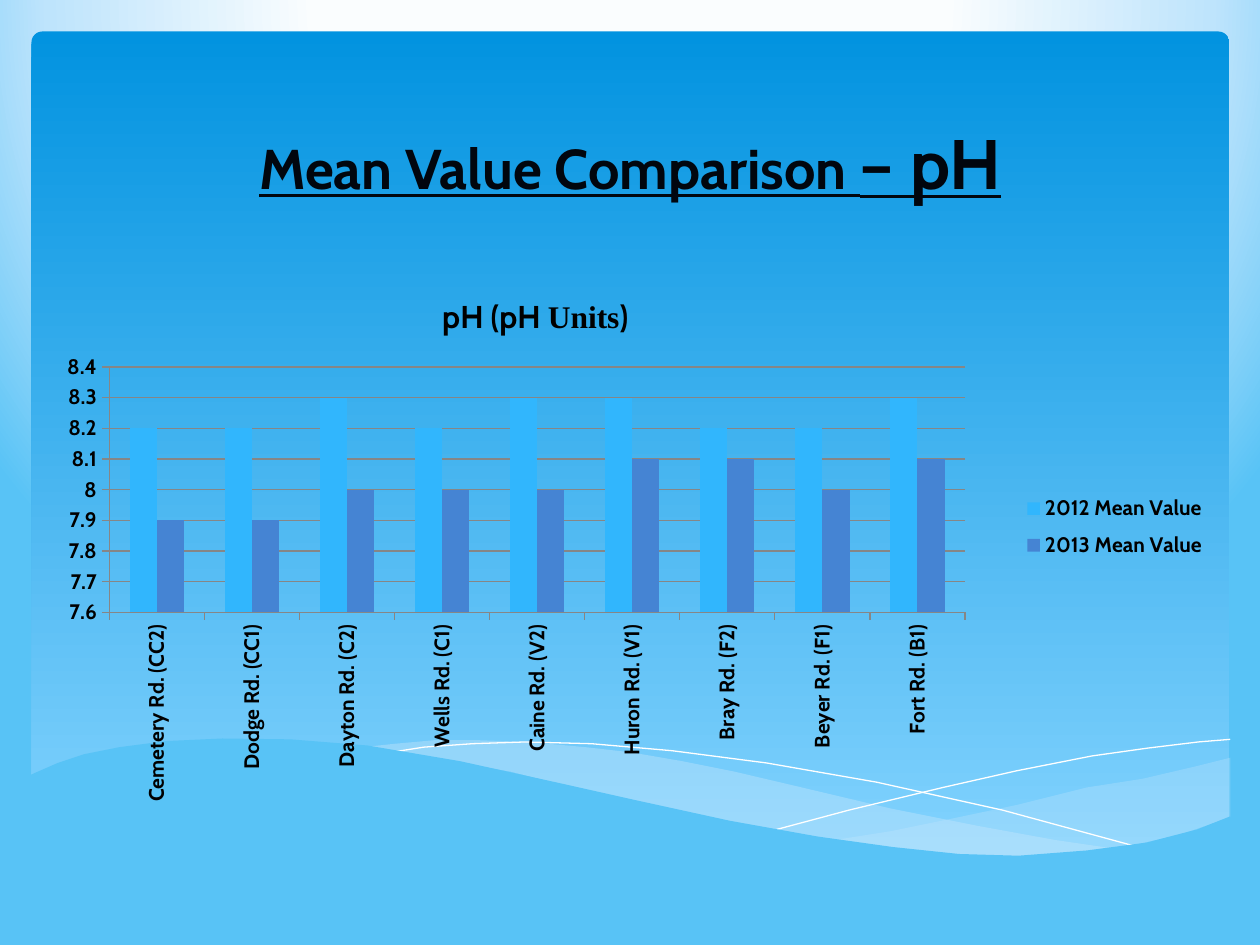
import pptx
import pptx.chart.data
import pptx.dml.color
import pptx.enum.chart
import pptx.enum.shapes
import pptx.enum.text
import pptx.oxml
import pptx.oxml.ns
import pptx.util
import lxml.etree

Pt = pptx.util.Pt
RGB = pptx.dml.color.RGBColor.from_string
qn = pptx.oxml.ns.qn
NS = pptx.oxml.ns.nsdecls("a")

THEME = {
    "font": "Cabin", "serif": "Times New Roman",
    "title": "01060E", "text": "000000", "axis": "868686",
    "panel": ("0293E0", "83D3FE"), "water": "58C3F6",
    "mist": "C6E7FC", "line": "FFFFFF",
    "glow": ((40, "FAFDFE"), (74, "BEE4FC"), (100, "58C3F6")),
    "series": ("31B6FD", "4584D3"),
    "title_size": 32, "emphasis_size": 40, "chart_title_size": 18, "label_size": 12,
}


def format_font(font, **values):
    """Set colour from a hex string and every other value by attribute name."""
    font.color.rgb = RGB(values.pop("color", THEME["text"]))
    for name, value in {"name": THEME["font"], "bold": True, **values}.items():
        setattr(font, name, value)


def place_in_chart(part, index, inner=False, **fractions):
    """Give a chart part a manual layout, in fractions of the chart area."""
    for old in part.findall(qn("c:layout")):
        part.remove(old)
    layout = lxml.etree.Element(qn("c:layout"))
    manual = lxml.etree.SubElement(layout, qn("c:manualLayout"))
    settings = {"layoutTarget": "inner"} if inner else {}
    settings |= {"xMode": "edge", "yMode": "edge", **fractions}
    for name, value in settings.items():
        lxml.etree.SubElement(manual, qn(f"c:{name}")).set("val", str(value))
    part.insert(index, layout)


deck = pptx.Presentation()
deck.slide_width, deck.slide_height = Pt(720), Pt(540)
slide = deck.slides.add_slide(deck.slide_layouts[0])
heading, subtitle = slide.placeholders
subtitle._element.getparent().remove(subtitle._element)

# Background glow from above the top edge
slide.background.fill.gradient()
default_glow = slide._element.find(".//" + qn("a:gradFill"))
stops = "".join(f'<a:gs pos="{pos * 1000}"><a:srgbClr val="{color}"/></a:gs>'
                for pos, color in THEME["glow"])
default_glow.getparent().replace(default_glow, pptx.oxml.parse_xml(
    f'<a:gradFill {NS} rotWithShape="1"><a:gsLst>{stops}</a:gsLst><a:path path="circle">'
    '<a:fillToRect l="20000" t="-40000" r="20000" b="140000"/></a:path></a:gradFill>'))

# Sky panel
sky = slide.shapes.add_shape(pptx.enum.shapes.MSO_SHAPE.ROUNDED_RECTANGLE,
                             Pt(18), Pt(18), Pt(684.5), Pt(475))
sky.adjustments[0] = 0.013
sky.shadow.inherit = False
sky.line.fill.background()
sky.fill.gradient()
sky.fill.gradient_angle = 270
for stop, position, color in zip(sky.fill.gradient_stops, (0, 1), THEME["panel"]):
    stop.position = position
    stop.color.rgb = RGB(color)

# Waves: fill colour (None for an open line), opacity in percent, outline in points
waves = [
    (THEME["mist"], 29, [
        (703, 433), (683, 438), (653, 445), (621, 450), (581, 460), (543, 468), (509, 475),
        (477, 480), (508, 485), (546, 488), (579, 490), (616, 488), (647, 483), (674, 477),
        (703, 467)]),
    (THEME["mist"], 40, [
        (644, 486), (603, 480), (559, 472), (509, 462), (454, 449), (420, 441), (390, 435),
        (361, 430), (335, 427), (302, 424), (274, 423), (248, 423), (226, 425), (207, 427),
        (247, 433), (292, 441), (324, 449), (382, 462), (433, 473), (480, 481), (522, 487),
        (557, 489), (590, 490), (618, 489)]),
    (None, 100, [
        (223, 430), (242, 427), (270, 425), (300, 424), (338, 425), (384, 429), (438, 436),
        (501, 447), (573, 463), (654, 485)]),
    (None, 100, [
        (442, 474.5), (485, 463), (539, 450), (581, 440.5), (624, 432), (656, 427.5),
        (685, 424), (703, 422.5)]),
    (THEME["water"], 100, [
        (703, 466.5), (684, 474), (655, 481.5), (621, 486), (582, 489), (548, 488), (510, 484),
        (467, 478), (417, 469), (362, 457), (322, 448), (263, 435), (210, 426), (166, 422.5),
        (127, 422), (95, 423.5), (68, 427), (48, 431), (33, 436), (17, 443), (17, 526),
        (703, 526)]),
]
for color, opacity, outline in waves:
    start, *rest = [(Pt(x), Pt(y)) for x, y in outline]
    builder = slide.shapes.build_freeform(*start)
    builder.add_line_segments(rest, close=color is not None)
    wave = builder.convert_to_shape()
    wave.shadow.inherit = False
    if color is None:
        wave.fill.background()
        wave.line.color.rgb = RGB(THEME["line"])
        wave.line.width = Pt(0)
        continue
    wave.line.fill.background()
    wave.fill.solid()
    wave.fill.fore_color.rgb = RGB(color)
    if opacity < 100:
        tint = wave._element.spPr.find(qn("a:solidFill"))[0]
        lxml.etree.SubElement(tint, qn("a:alpha")).set("val", str(opacity * 1000))

# Heading, in front of the waves
slide.shapes._spTree.append(heading._element)
heading.left, heading.top, heading.width, heading.height = Pt(54), Pt(66), Pt(612), Pt(54)
heading.text_frame.vertical_anchor = pptx.enum.text.MSO_ANCHOR.BOTTOM
heading_line = heading.text_frame.paragraphs[0]
heading_line.alignment = pptx.enum.text.PP_ALIGN.CENTER
for words, size in (("Mean Value Comparison ", THEME["title_size"]),
                    ("– pH", THEME["emphasis_size"])):
    run = heading_line.add_run()
    run.text = words
    format_font(run.font, size=Pt(size), color=THEME["title"], underline=True)

# pH by site and year
ph_data = pptx.chart.data.CategoryChartData()
ph_data.categories = [
    "Cemetery Rd. (CC2)", "Dodge Rd. (CC1)", "Dayton Rd. (C2)", "Wells Rd. (C1)",
    "Caine Rd. (V2)", "Huron Rd. (V1)", "Bray Rd. (F2)", "Beyer Rd. (F1)", "Fort Rd. (B1)"]
ph_data.add_series("2012 Mean Value", (8.2, 8.2, 8.3, 8.2, 8.3, 8.3, 8.2, 8.2, 8.3))
ph_data.add_series("2013 Mean Value", (7.9, 7.9, 8, 8, 8, 8.1, 8.1, 8, 8.1))
ph_chart = slide.shapes.add_chart(pptx.enum.chart.XL_CHART_TYPE.COLUMN_CLUSTERED,
                                  Pt(18), Pt(144), Pt(684), Pt(324), ph_data).chart
format_font(ph_chart.font, size=Pt(THEME["label_size"]))

bars = ph_chart.plots[0]
bars.gap_width, bars.overlap, bars.vary_by_categories = 150, 0, False
for year, color in zip(bars.series, THEME["series"]):
    year.format.fill.solid()
    year.format.fill.fore_color.rgb = RGB(color)

sites, ph_scale = ph_chart.category_axis, ph_chart.value_axis
for name, value in {"minimum_scale": 7.6, "maximum_scale": 8.4, "major_unit": 0.1,
                    "has_major_gridlines": True}.items():
    setattr(ph_scale, name, value)
for axis in (sites, ph_scale):
    axis.major_tick_mark = pptx.enum.chart.XL_TICK_MARK.OUTSIDE
    format_font(axis.tick_labels.font, size=Pt(THEME["label_size"]))
for ruled in (sites, ph_scale, ph_scale.major_gridlines):
    ruled.format.line.color.rgb = RGB(THEME["axis"])
    ruled.format.line.width = Pt(0.75)
site_labels = sites._element.find(qn("c:txPr")).find(qn("a:bodyPr"))
site_labels.set("rot", "-5400000")
site_labels.set("vert", "horz")

ph_chart.has_title = True
caption = ph_chart.chart_title.text_frame.paragraphs[0]
for words, face in (("pH (pH ", "font"), ("Units", "serif"), (")", "font")):
    run = caption.add_run()
    run.text = words
    format_font(run.font, size=Pt(THEME["chart_title_size"]), name=THEME[face])

ph_chart.has_legend = True
ph_chart.legend.position = pptx.enum.chart.XL_LEGEND_POSITION.RIGHT
ph_chart.legend.include_in_layout = False
format_font(ph_chart.legend.font, size=Pt(THEME["label_size"]))

plot_area = ph_chart._chartSpace.find(".//" + qn("c:plotArea"))
place_in_chart(plot_area, 0, inner=True, x=0.065, y=0.203, w=0.715, h=0.433)
place_in_chart(ph_chart.chart_title._element, 1, x=0.34, y=0.07)
place_in_chart(ph_chart.legend._element, 1, x=0.82, y=0.41, w=0.17, h=0.15)

deck.save("out.pptx")
